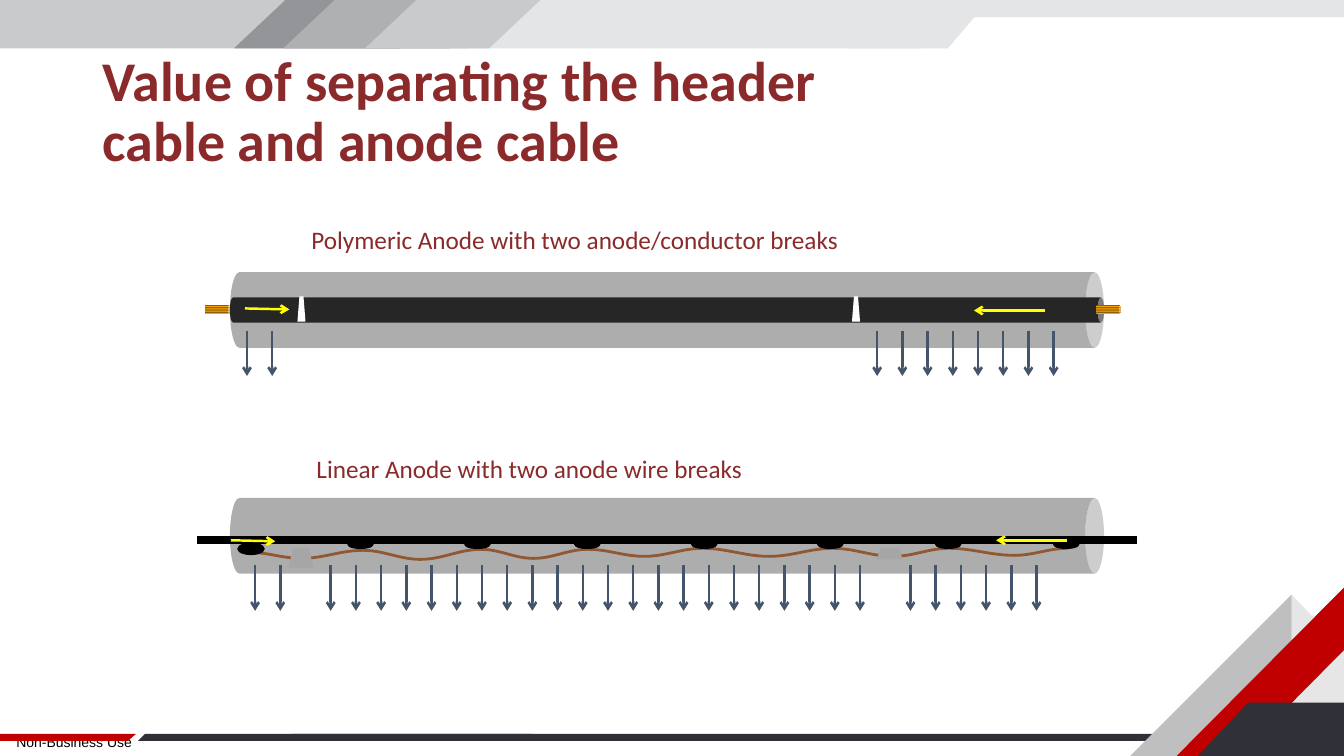
from math import cos, pi

from lxml import etree
from pptx import Presentation
from pptx.dml.color import RGBColor
from pptx.enum.shapes import MSO_CONNECTOR, MSO_SHAPE
from pptx.enum.text import MSO_ANCHOR, PP_ALIGN
from pptx.oxml.ns import qn
from pptx.util import Inches, Pt

SLIDE_W, SLIDE_H = 13.33, 7.5
MAROON, DARK, RED = "8A2A2B", "303138", "C00000"
SLATE, YELLOW, BLACK = "44546A", "FFFF00", "000000"
PIPE_W, PIPE_H = 8.67, 0.75
ARROW_STEP = 0.25


def rgb(value):
    return RGBColor.from_string(value)


def paint(shape, fill=None, line=None, width=1):
    shape.shadow.inherit = False
    if fill:
        shape.fill.solid()
        shape.fill.fore_color.rgb = rgb(fill)
    else:
        shape.fill.background()
    if line:
        shape.line.color.rgb = rgb(line)
        shape.line.width = Pt(width)
    else:
        shape.line.fill.background()


def add_preset(slide, kind, x, y, w, h, fill, line=None):
    shape = slide.shapes.add_shape(kind, Inches(x), Inches(y), Inches(w), Inches(h))
    paint(shape, fill, line)
    return shape


def add_outline(slide, points, fill=None, line=None, width=1, close=True):
    corners = [(Inches(x), Inches(y)) for x, y in points]
    builder = slide.shapes.build_freeform(*corners[0], scale=1.0)
    builder.add_line_segments(corners[1:], close=close)
    paint(builder.convert_to_shape(), fill, line, width)


def add_lying_can(slide, x, y, w, h, fill):
    """Cylinder on its side, filling the box x, y, w, h."""
    can = add_preset(slide, MSO_SHAPE.CAN, x + (w - h) / 2, y + (h - w) / 2, h, w, fill)
    can.rotation = 90
    return can


def add_line(slide, x1, y1, x2, y2, color, width, arrow=False):
    line = slide.shapes.add_connector(
        MSO_CONNECTOR.STRAIGHT, Inches(x1), Inches(y1), Inches(x2), Inches(y2))
    line.line.color.rgb = rgb(color)
    line.line.width = Pt(width)
    if arrow:
        etree.SubElement(line.line._get_or_add_ln(), qn("a:tailEnd"), type="arrow")
    etree.SubElement(line._element.spPr, qn("a:effectLst"))


def add_text(slide, x, y, w, h, text, size, color, font="Calibri", bold=False,
             anchor=MSO_ANCHOR.TOP, align=PP_ALIGN.LEFT, spacing=None, inset=None):
    frame = slide.shapes.add_textbox(Inches(x), Inches(y), Inches(w), Inches(h)).text_frame
    frame.word_wrap = True
    frame.vertical_anchor = anchor
    if inset is not None:
        frame.margin_left = frame.margin_right = Inches(inset)
        frame.margin_top = frame.margin_bottom = Inches(inset)
    paragraph = frame.paragraphs[0]
    paragraph.alignment = align
    if spacing:
        paragraph.line_spacing = spacing
    run = paragraph.add_run()
    run.text = text
    run.font.name, run.font.size, run.font.bold = font, Pt(size), bold
    run.font.color.rgb = rgb(color)


def add_discharge(slide, x, y, count):
    """Row of evenly spaced current arrows pointing down."""
    for i in range(count):
        arrow_x = x + i * ARROW_STEP
        add_line(slide, arrow_x, y, arrow_x, y + 0.45, SLATE, 1.75, arrow=True)


def add_pipe(slide, x, y):
    pipe = add_lying_can(slide, x, y, PIPE_W, PIPE_H, "595959")
    color = pipe._element.spPr.find(qn("a:solidFill"))[0]
    etree.SubElement(color, qn("a:alpha"), val="49000")


def add_copper_end(slide, x, y):
    copper = add_lying_can(slide, x, y, 0.25, 0.08, "FFA800")
    copper.fill.gradient()
    copper.fill.gradient_angle = 0
    stops = copper._element.spPr.find(qn("a:gradFill")).find(qn("a:gsLst"))
    for stop in list(stops):
        stops.remove(stop)
    for i, place in enumerate((0, 13, 28, 43, 58, 72, 87, 100)):
        stop = etree.SubElement(stops, qn("a:gs"), pos=str(place * 1000))
        etree.SubElement(stop, qn("a:srgbClr"), val=("825600", "FFA800")[i % 2])


def draw_top_band(slide, x, y):
    for left, width, height, fill in ((8.54, SLIDE_W - 8.54, 0.17, "E4E5E6"),
                                      (0, 4.64, 0.48, "C9CACB"),
                                      (3.36, 5.78, 0.48, "E4E5E6")):
        add_preset(slide, MSO_SHAPE.RECTANGLE, x + left, y, width, height, fill)
    # Slanted stripes: bottom left, width, slant
    for left, width, slant, fill in ((2.32, 1.64, 0.51, "949598"),
                                     (2.81, 1.65, 0.51, "AFB0B2"),
                                     (3.62, 1.23, 0.51, "C9CACB"),
                                     (8.42, 0.98, 0.41, "E4E5E6")):
        left += x
        add_outline(slide, [(left + slant, y), (left, y + 0.48), (left + width, y + 0.48),
                            (left + width + slant, y)], fill)


def draw_footer(slide, x, y):
    add_text(slide, x, y - 0.05, 1.47, 0.27, "Non-Business Use", 10, BLACK, "Arial",
             anchor=MSO_ANCHOR.MIDDLE, align=PP_ALIGN.CENTER, inset=0)
    # Thin bars: top left, top right, bottom left, bottom right
    for tl, tr, bl, br, fill in ((2.9, 12.71, 2.71, 12.52, DARK),
                                 (1.44, 5.28, 1.37, 5.2, DARK),
                                 (0, 1.35, 0, 1.27, RED)):
        add_outline(slide, [(x + tl, y), (x + bl, y + 0.07), (x + br, y + 0.07),
                            (x + tr, y)], fill)


def draw_corner(slide, right, bottom):
    # Offsets left of and above the bottom right corner
    for offsets, fill in (
            ([(0.52, 1.6), (0, 1.06), (0, 0), (0.52, 0)], "E6E6E6"),
            ([(2.12, 0), (0.52, 0), (0.52, 1.6)], "BFBFBF"),
            ([(0, 1.67), (0, 1.05), (1.04, 0), (1.66, 0)], RED),
            ([(0, 0), (0, 0.53), (0.95, 0.53), (1.45, 0)], DARK)):
        add_outline(slide, [(right - dx, bottom - dy) for dx, dy in offsets], fill)


def draw_polymeric_anode(slide, x, y):
    add_text(slide, x + 0.71, y - 0.52, 5.82, 0.4,
             "Polymeric Anode with two anode/conductor breaks", 18, MAROON)
    add_pipe(slide, x, y)
    add_lying_can(slide, x, y + 0.25, PIPE_W, 0.25, "262626")
    for end in (-0.25, 8.59):
        add_copper_end(slide, x + end, y + 0.33)
    for gap in (0.67, 6.17):
        add_preset(slide, MSO_SHAPE.TRAPEZOID, x + gap, y + 0.24, 0.08, 0.25, "FFFFFF")
    # Current flow
    add_line(slide, x + 8.08, y + 0.38, x + 7.38, y + 0.38, YELLOW, 1.75, arrow=True)
    add_line(slide, x + 0.15, y + 0.36, x + 0.59, y + 0.37, YELLOW, 1.75, arrow=True)
    for start, count in ((0.17, 2), (6.42, 8)):
        add_discharge(slide, x + start, y + 0.58, count)


def draw_linear_anode(slide, x, y):
    add_text(slide, x + 0.76, y - 0.49, 5.82, 0.4,
             "Linear Anode with two anode wire breaks", 18, MAROON)
    # Anode wire: smooth wave through its crests and troughs
    turns = [(0.19, 0.54), (0.71, 0.6), (1.32, 0.52), (1.89, 0.61), (2.49, 0.51),
             (3.01, 0.6), (3.55, 0.51), (4.11, 0.58), (4.69, 0.5), (5.35, 0.58),
             (5.98, 0.5), (6.58, 0.58), (7.13, 0.5), (7.78, 0.57), (8.31, 0.5)]
    wave = [(x + x1 + (x2 - x1) * i / 12, y + y1 + (y2 - y1) * (1 - cos(pi * i / 12)) / 2)
            for (x1, y1), (x2, y2) in zip(turns, turns[1:]) for i in range(13)]
    add_outline(slide, wave + [(x + 8.31, y + 0.45)], line="C55A11", width=2, close=False)
    add_pipe(slide, x, y)
    # Header cable and its connections
    add_line(slide, x - 0.33, y + 0.42, x + 9, y + 0.42, BLACK, 5.75)
    add_preset(slide, MSO_SHAPE.OVAL, x + 0.08, y + 0.45, 0.26, 0.11, BLACK, BLACK)
    for joint in (1.17, 2.33, 3.42, 4.58, 5.83, 7, 8.17):
        add_preset(slide, MSO_SHAPE.OVAL, x + joint, y + 0.42, 0.25, 0.08, BLACK, BLACK)
    # Wire breaks
    for gap, height in ((0.58, 0.19), (6.42, 0.11)):
        add_preset(slide, MSO_SHAPE.TRAPEZOID, x + gap, y + 0.5, 0.25, height, "A6A6A6")
    # Current flow
    add_line(slide, x + 8.3, y + 0.42, x + 7.6, y + 0.42, YELLOW, 1.75, arrow=True)
    add_line(slide, x + 0.01, y + 0.42, x + 0.45, y + 0.43, YELLOW, 1.75, arrow=True)
    for start, count in ((0.25, 2), (1, 22), (6.75, 6)):
        add_discharge(slide, x + start, y + 0.67, count)


def main():
    deck = Presentation()
    deck.slide_width, deck.slide_height = Inches(SLIDE_W), Inches(SLIDE_H)
    slide = deck.slides.add_slide(deck.slide_layouts[6])
    draw_footer(slide, 0, 7.28)
    draw_top_band(slide, 0, 0)
    draw_corner(slide, SLIDE_W, SLIDE_H)
    add_text(slide, 0.92, 0.4, 8.28, 1.45,
             "Value of separating the header cable and anode cable", 40, MAROON,
             bold=True, anchor=MSO_ANCHOR.MIDDLE, spacing=0.9)
    draw_polymeric_anode(slide, 2.28, 2.7)
    draw_linear_anode(slide, 2.28, 4.94)
    deck.save("out.pptx")


if __name__ == "__main__":
    main()
